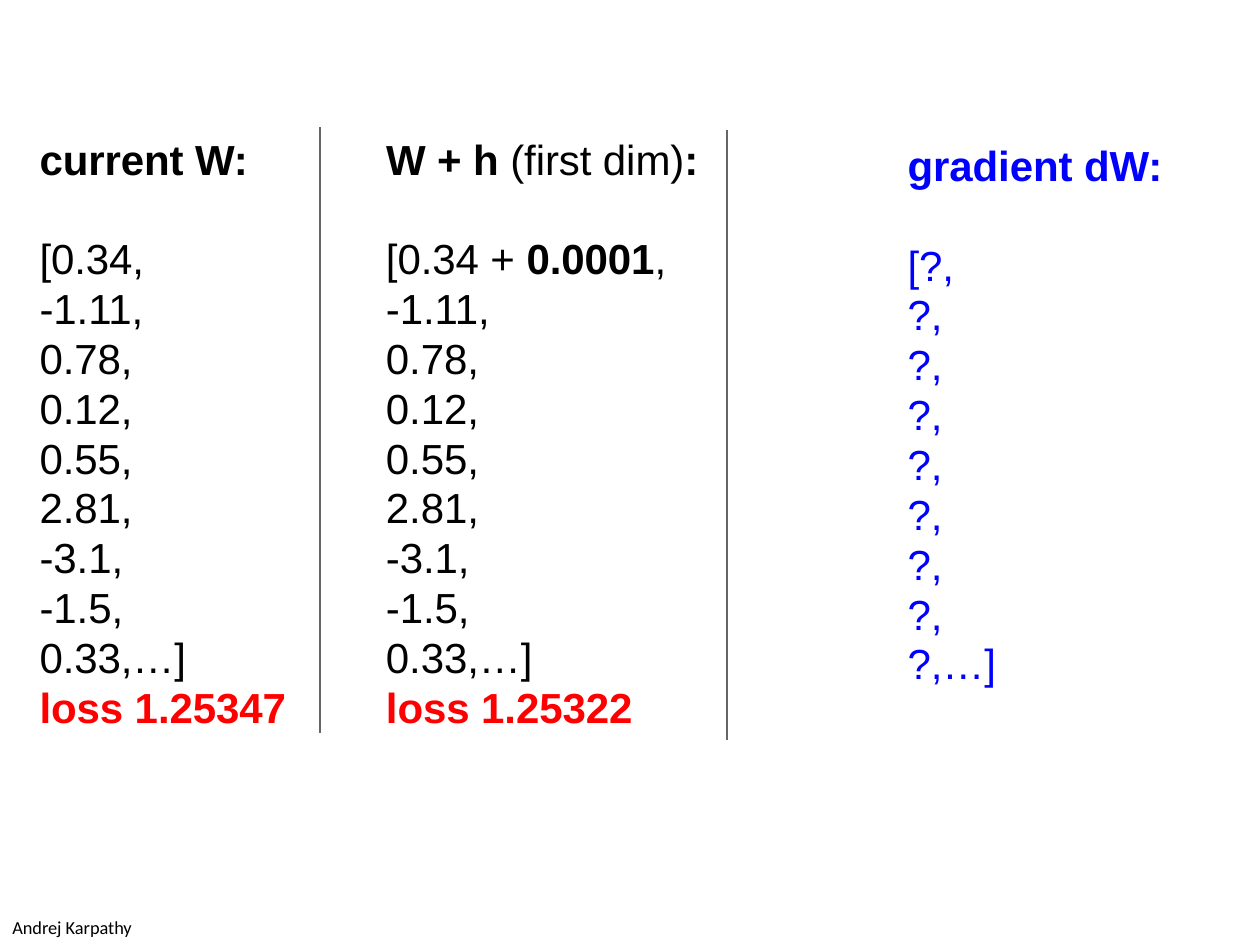
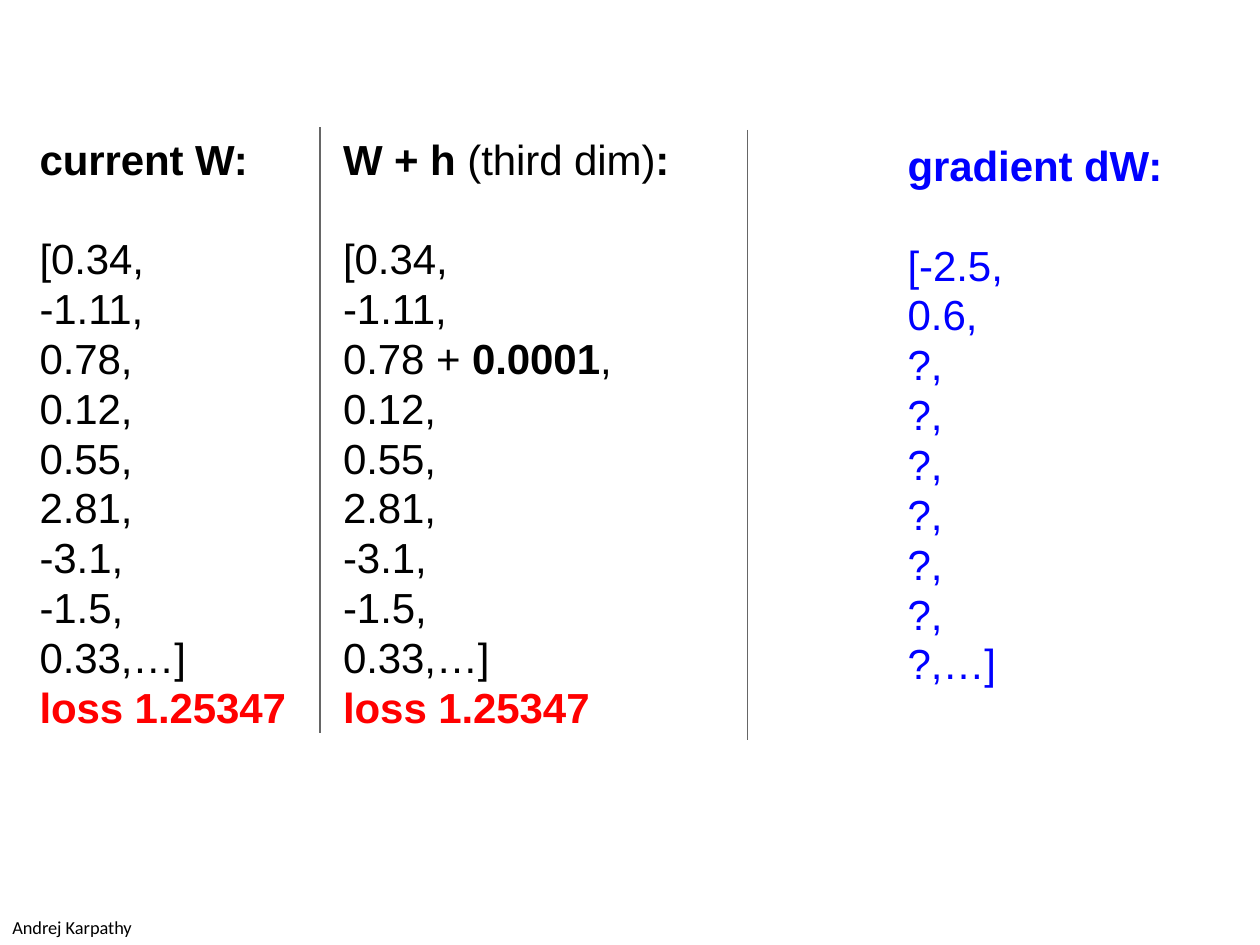
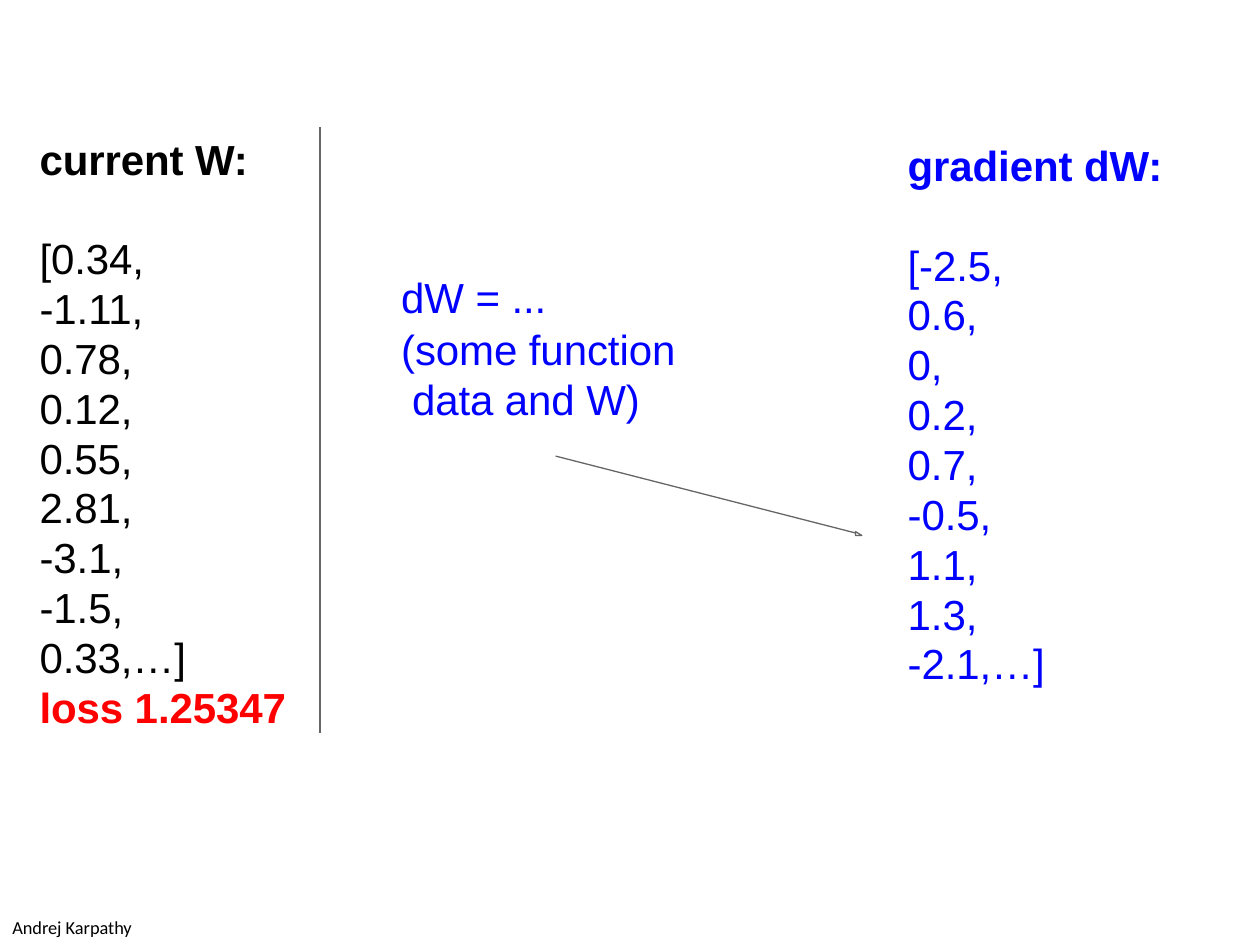
"""Build three slides that work out a numerical and an analytic gradient."""
import pptx
import pptx.util
import pptx.dml.color
import pptx.enum.shapes
import pptx.enum.text
import lxml.etree

Inches, Pt = pptx.util.Inches, pptx.util.Pt
RGB = pptx.dml.color.RGBColor
BLACK, RED, BLUE, GREY = RGB(0, 0, 0), RGB(255, 0, 0), RGB(0, 0, 255), RGB(102, 102, 102)
A = "http://schemas.openxmlformats.org/drawingml/2006/main"

WEIGHTS = ["[0.34", "-1.11", "0.78", "0.12", "0.55", "2.81", "-3.1", "-1.5", "0.33"]
LOSS = "1.25347"
FOOTER = "Andrej Karpathy"
SLIDES = [
    {"step": {"dim": "first", "index": 0, "loss": "1.25322", "left": 3.05,
              "widths": (2.52, 2.26), "divider": 5.77},
     "gradient": ["[?"] + ["?"] * 8, "gradient_width": 0.73},
    {"step": {"dim": "third", "index": 2, "loss": "1.25347", "left": 2.71,
              "widths": (2.63, 2.17), "divider": 5.93},
     "gradient": ["[-2.5", "0.6"] + ["?"] * 7, "gradient_width": 0.79},
    {"formula": ["dW = ...", "(some function", "data and W)"],
     "gradient": ["[-2.5", "0.6", "0", "0.2", "0.7", "-0.5", "1.1", "1.3", "-2.1"],
     "gradient_width": 1.12},
]

WIDTH, HEIGHT = 10, 7.5
HEAD_TOP, HEAD_HEIGHT, VALUES_DROP = 1.06, 0.41, 0.79
FIRST_LINE, LINE = Pt(28.6), Pt(28.5)
CURRENT_LEFT, CURRENT_DIVIDER, GRADIENT_LEFT = 0.3, 2.54, 7.19
GRADIENT_SHIFT = 0.05


def add_box(slide, left, top, width, height, wrap=True):
    sp = slide.shapes.add_textbox(Inches(left), Inches(top), Inches(width), Inches(height))
    tf = sp.text_frame
    tf.word_wrap = wrap
    tf.auto_size = pptx.enum.text.MSO_AUTO_SIZE.SHAPE_TO_FIT_TEXT
    return tf


def add_lines(slide, left, top, width, lines, color, spaced=True):
    height = len(lines) * LINE.inches if spaced else HEAD_HEIGHT
    tf = add_box(slide, left, top, width, height)
    tf.margin_left = tf.margin_top = tf.margin_right = tf.margin_bottom = 0
    for i, line in enumerate(lines):
        p = tf.add_paragraph() if i else tf.paragraphs[0]
        p.font.size, p.font.name = Pt(24), "Arial"
        p.font.color.rgb = RED if line.startswith("**loss") else color
        if spaced:
            p.line_spacing = LINE if i else FIRST_LINE
        p._p.get_or_add_pPr().set("marL", str(Pt(1)))
        for j, part in enumerate(line.split("**")):
            if part:
                r = p.add_run()
                r.text, r.font.bold = part, j % 2 == 1
                r._r.get_or_add_rPr().set("spc", "-5")
    return tf


def add_column(slide, left, top, widths, heading, values, color, loss=None):
    lines = [v + "," for v in values[:-1]] + [values[-1] + ",…]"]
    if loss:
        lines.append(f"**loss {loss}**")
    add_lines(slide, left, top, widths[0], [heading], color, spaced=False)
    add_lines(slide, left, top + VALUES_DROP, widths[1], lines, color)


def add_line(slide, x1, y1, x2, y2):
    sp = slide.shapes.add_connector(pptx.enum.shapes.MSO_CONNECTOR.STRAIGHT,
                                    Inches(x1), Inches(y1), Inches(x2), Inches(y2))
    sp.line.color.rgb, sp.line.width = GREY, Pt(0.75)
    lxml.etree.SubElement(sp._element.spPr, f"{{{A}}}effectLst")


def add_arrow(slide):
    add_line(slide, 4.41, 3.62, 6.79, 4.23)
    outline = slide.shapes.build_freeform(679, 425, scale=Inches(0.01))
    outline.add_line_segments([(684, 425), (679, 422)], close=True)
    sp = outline.convert_to_shape()
    sp.shadow.inherit = False
    sp.fill.background()
    sp.line.color.rgb, sp.line.width = GREY, Pt(0.75)


def add_step(slide, step):
    values = list(WEIGHTS)
    values[step["index"]] += " + **0.0001**"
    add_column(slide, step["left"], HEAD_TOP, step["widths"],
               f"**W + h **({step['dim']} dim)**:**", values, BLACK, step["loss"])
    add_line(slide, step["divider"], 1.03, step["divider"], 5.87)


def add_formula(slide, lines):
    tf = add_lines(slide, 3.17, 2.16, 2.21, lines, BLUE)
    tf.paragraphs[1].space_before = Pt(1.1)
    tf.paragraphs[2]._p.get_or_add_pPr().set("marL", str(Inches(0.1)))
    add_arrow(slide)


def add_footer(slide):
    p = add_box(slide, 0, HEIGHT - 0.28, 1.17, 0.28, wrap=False).paragraphs[0]
    p.text = FOOTER
    p.font.size, p.font.name, p.font.color.rgb = Pt(10.5), "Calibri", BLACK


def main():
    prs = pptx.Presentation()
    prs.slide_width, prs.slide_height = Inches(WIDTH), Inches(HEIGHT)
    for content in SLIDES:
        slide = prs.slides.add_slide(prs.slide_layouts[6])
        add_column(slide, CURRENT_LEFT, HEAD_TOP, (1.69, 1.99),
                   "**current W:**", WEIGHTS, BLACK, LOSS)
        add_line(slide, CURRENT_DIVIDER, 1.01, CURRENT_DIVIDER, 5.82)
        if "step" in content:
            add_step(slide, content["step"])
        else:
            add_formula(slide, content["formula"])
        add_column(slide, GRADIENT_LEFT, HEAD_TOP + GRADIENT_SHIFT,
                   (2.06, content["gradient_width"]),
                   "**gradient dW:**", content["gradient"], BLUE)
        add_footer(slide)
    prs.save("out.pptx")


if __name__ == "__main__":
    main()
